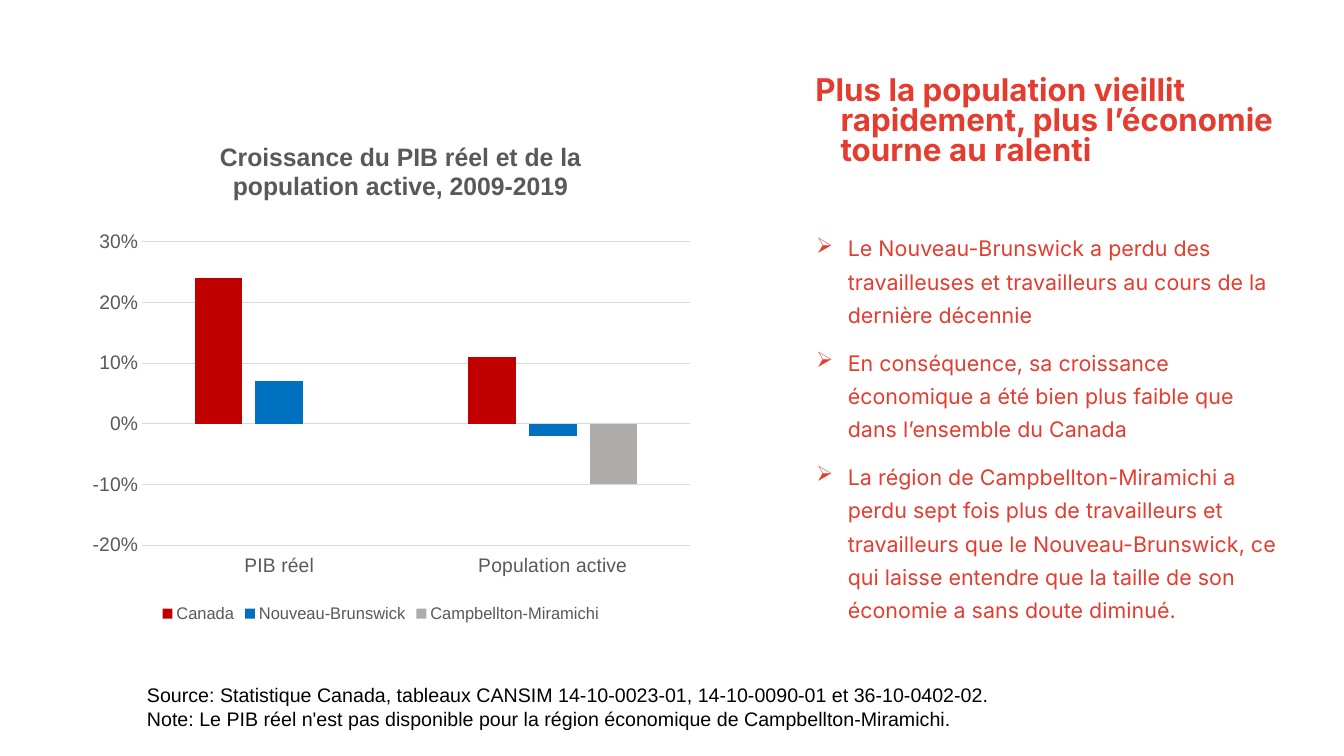
"""Build a slide on ageing, growth and the labour force in New Brunswick."""
from pptx import Presentation
from pptx import util as u
from pptx.chart.data import CategoryChartData
from pptx.dml.color import RGBColor
from pptx.enum import chart as ch
from pptx.oxml import parse_xml
from pptx.oxml.ns import nsdecls

RED, GREY, RULE = "E43D30", "595959", "D9D9D9"
HEAD = "Plus la population vieillit rapidement, plus l’économie tourne au ralenti"
POINTS = [
    "Le Nouveau-Brunswick a perdu des travailleuses et travailleurs au cours de la dernière décennie",
    "En conséquence, sa croissance économique a été bien plus faible que dans l’ensemble du Canada",
    "La région de Campbellton-Miramichi a perdu sept fois plus de travailleurs et travailleurs que le "
    "Nouveau-Brunswick, ce qui laisse entendre que la taille de son économie a sans doute diminué.",
]
NOTES = [
    "Source: Statistique Canada, tableaux CANSIM 14-10-0023-01, 14-10-0090-01 et 36-10-0402-02.",
    "Note: Le PIB réel n'est pas disponible pour la région économique de Campbellton-Miramichi.",
]
TITLE = "Croissance du PIB réel et de la population active, 2009-2019"
CATS = ["PIB réel", "Population active"]
SERIES = [
    ("Canada", (0.24, 0.11), "C00000"),
    ("Nouveau-Brunswick", (0.07, -0.02), "0070C0"),
    ("Campbellton-Miramichi", (None, -0.1), "AFABAB"),
]


def color(code):
    return RGBColor.from_string(code)


def style(font, size, code, bold=False, name="Arial"):
    font.size, font.bold, font.name = u.Pt(size), bold, name
    font.color.rgb = color(code)


def add_text(slide, box, lines, size, code, name="Arial", bold=False,
             left=0, hang=0, space=None, gap=0, mark=None):
    frame = slide.shapes.add_textbox(*map(u.Pt, box)).text_frame
    frame.word_wrap = True
    for i, line in enumerate(lines):
        para = frame.paragraphs[0] if i == 0 else frame.add_paragraph()
        props = para._p.get_or_add_pPr()
        props.set("marL", str(u.Pt(left)))
        props.set("indent", str(-u.Pt(hang)))
        if mark:
            props.append(parse_xml(
                f'<a:buClr {nsdecls("a")}><a:srgbClr val="{code}"/></a:buClr>'))
            props.append(parse_xml(f'<a:buChar {nsdecls("a")} char="{mark}"/>'))
        para.line_spacing = space
        para.space_before = u.Pt(gap if i else 0)
        run = para.add_run()
        run.text = line
        style(run.font, size, code, bold, name)


def layout(x, y, wide=None, high=None, inner=False):
    target = '<c:layoutTarget val="inner"/>' if inner else ""
    parts = [("xMode", "edge"), ("yMode", "edge"), ("x", x), ("y", y)]
    if wide:
        parts += [("w", wide), ("h", high)]
    body = "".join(f'<c:{tag} val="{val}"/>' for tag, val in parts)
    return parse_xml(f'<c:layout {nsdecls("c")}><c:manualLayout>{target}{body}'
                     '</c:manualLayout></c:layout>')


def place(node, new, after=None):
    for old in node.findall(new.tag):
        node.remove(old)
    if after is None:
        node.insert(0, new)
    else:
        after.addnext(new)


def add_chart(slide, box):
    data = CategoryChartData(number_format="0%")
    data.categories = CATS
    for name, vals, _ in SERIES:
        data.add_series(name, vals)
    chart = slide.shapes.add_chart(
        ch.XL_CHART_TYPE.COLUMN_CLUSTERED, *map(u.Pt, box), data).chart
    style(chart.font, 10, "000000")

    run = chart.chart_title.text_frame.paragraphs[0].add_run()
    run.text = TITLE
    style(run.font, 18, GREY, True)
    chart.chart_title.include_in_layout = False

    plot = chart.plots[0]
    plot.gap_width, plot.overlap, plot.vary_by_categories = 219, -27, False
    for bars, (_, _, code) in zip(plot.series, SERIES):
        bars.invert_if_negative = False
        bars.format.fill.solid()
        bars.format.fill.fore_color.rgb = color(code)

    cat, val = chart.category_axis, chart.value_axis
    for axis in (cat, val):
        axis.major_tick_mark = axis.minor_tick_mark = ch.XL_TICK_MARK.NONE
        style(axis.tick_labels.font, 14, GREY)
    cat.tick_label_position = ch.XL_TICK_LABEL_POSITION.LOW
    val.minimum_scale, val.maximum_scale, val.major_unit = -0.2, 0.3, 0.1
    val.tick_labels.number_format = "0%"
    val.tick_labels.number_format_is_linked = False
    val.format.line.fill.background()
    for line in (cat.format.line, val.major_gridlines.format.line):
        line.color.rgb, line.width = color(RULE), u.Pt(0.75)

    chart.has_legend = True
    key = chart.legend
    key.position, key.include_in_layout = ch.XL_LEGEND_POSITION.BOTTOM, False
    style(key.font, 12, GREY)
    place(key._element, layout(0.09, 0.9), key._element.find("{*}legendPos"))
    place(chart._chartSpace.chart.plotArea,
          layout(0.065, 0.228, 0.922, 0.568, True))


def main():
    deck = Presentation()
    deck.slide_width, deck.slide_height = u.Pt(960), u.Pt(540)
    slide = deck.slides.add_slide(deck.slide_layouts[6])
    add_text(slide, (557.3, 51.8, 366.5, 93.6), [HEAD], 22.4, RED, "Inter",
             True, left=36, hang=18, space=0.8)
    add_text(slide, (558, 159.1, 366.5, 311.8), POINTS, 15.3, RED, "Inter",
             left=40.5, hang=22.5, space=1.3, gap=10, mark="➢")
    add_chart(slide, (66.2, 85.7, 432, 381.6))
    add_text(slide, (97.9, 484.6, 673.9, 41), NOTES, 14, "000000")
    deck.save("out.pptx")


if __name__ == "__main__":
    main()
